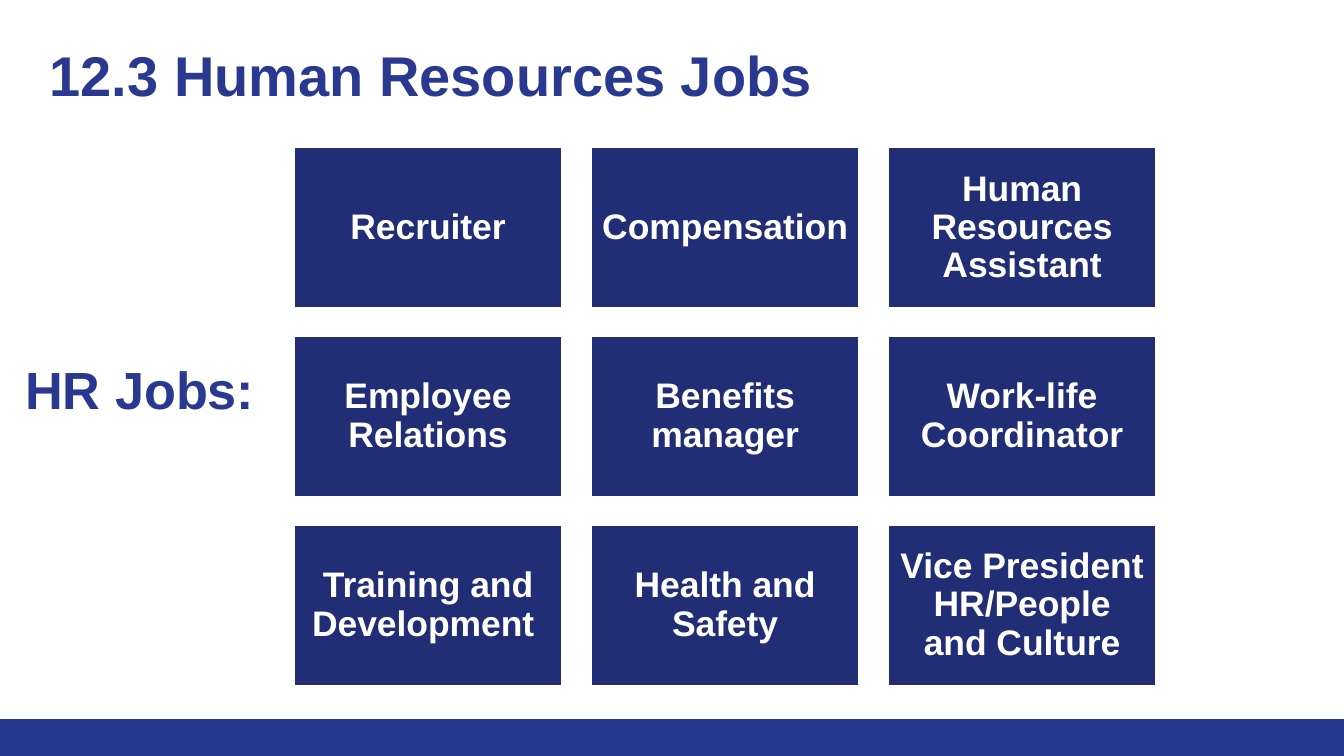
import pptx
import pptx.util
import pptx.dml.color
import pptx.enum.shapes
import pptx.enum.text
from dataclasses import dataclass

Inch = pptx.util.Inches
Pt = pptx.util.Pt
Align = pptx.enum.text.PP_ALIGN
Anchor = pptx.enum.text.MSO_ANCHOR
RECT = pptx.enum.shapes.MSO_SHAPE.RECTANGLE


@dataclass(frozen=True)
class Theme:
    font: str = "Arial"
    blue: str = "2A3990"
    navy: str = "212D74"
    white: str = "FFFFFF"
    title: int = 30
    label: int = 28
    job: int = 19


THEME = Theme()
WIDE = 10
HIGH = WIDE * 9 / 16

# Job grid: outer edges, tile size and step, in inches
LEFT, TOP = 2.18, 1.09
LAST_LEFT, LAST_TOP = 6.6, 3.9
TILE_W, TILE_H = 2.01, 1.21
STEP_X = (LAST_LEFT - LEFT) / 2
STEP_Y = (LAST_TOP - TOP) / 2

JOBS = [
    ["Recruiter", "Compensation", "Human Resources Assistant"],
    ["Employee Relations", "Benefits manager", "Work-life Coordinator"],
    ["Training and Development ", "Health and Safety",
     "Vice President HR/People and Culture"],
]


def color(code):
    return pptx.dml.color.RGBColor.from_string(code)


def write(shape, text, size, code, align, anchor, pad):
    """Fill a shape with one bold paragraph."""
    frame = shape.text_frame
    frame.word_wrap = True
    frame.auto_size = pptx.enum.text.MSO_AUTO_SIZE.NONE
    frame.vertical_anchor = anchor
    frame.margin_left = frame.margin_right = Inch(pad)
    frame.margin_top = frame.margin_bottom = Inch(pad)
    para = frame.paragraphs[0]
    para.text = text
    para.alignment = align
    para.font.name = THEME.font
    para.font.size = Pt(size)
    para.font.bold = True
    para.font.color.rgb = color(code)
    return para


def head(shape, text, size):
    para = write(shape, text, size, THEME.blue, Align.LEFT, Anchor.TOP, 0.1)
    para.space_before = Pt(0)


def block(slide, left, top, width, height, fill):
    shape = slide.shapes.add_shape(
        RECT, Inch(left), Inch(top), Inch(width), Inch(height))
    shape.shadow.inherit = False
    shape.fill.solid()
    shape.fill.fore_color.rgb = color(fill)
    shape.line.fill.background()
    return shape


def tile(slide, col, row, text):
    shape = block(slide, LEFT + col * STEP_X, TOP + row * STEP_Y,
                  TILE_W, TILE_H, THEME.navy)
    shape.line.color.rgb = color(THEME.white)
    shape.line.width = Pt(2)
    para = write(shape, text, THEME.job, THEME.white, Align.CENTER,
                 Anchor.MIDDLE, 0.08)
    para.line_spacing = 0.9


def main():
    deck = pptx.Presentation()
    deck.slide_width, deck.slide_height = Inch(WIDE), Inch(HIGH)
    slide = deck.slides.add_slide(deck.slide_layouts.get_by_name("Title Only"))

    # Footer band
    block(slide, 0, 5.35, WIDE, HIGH - 5.35, THEME.blue)

    # Title
    title = slide.shapes.title
    title.left, title.top = Inch(0.27), Inch(0.2)
    title.width, title.height = Inch(9.2), Inch(0.89)
    head(title, "12.3 Human Resources Jobs", THEME.title)

    # Side label
    label = slide.shapes.add_textbox(
        Inch(0.09), Inch(2.56), Inch(9.2), Inch(0.51))
    head(label, "HR Jobs:", THEME.label)

    # Job tiles
    for row, names in enumerate(JOBS):
        for col, name in enumerate(names):
            tile(slide, col, row, name)

    deck.save("out.pptx")


if __name__ == "__main__":
    main()
